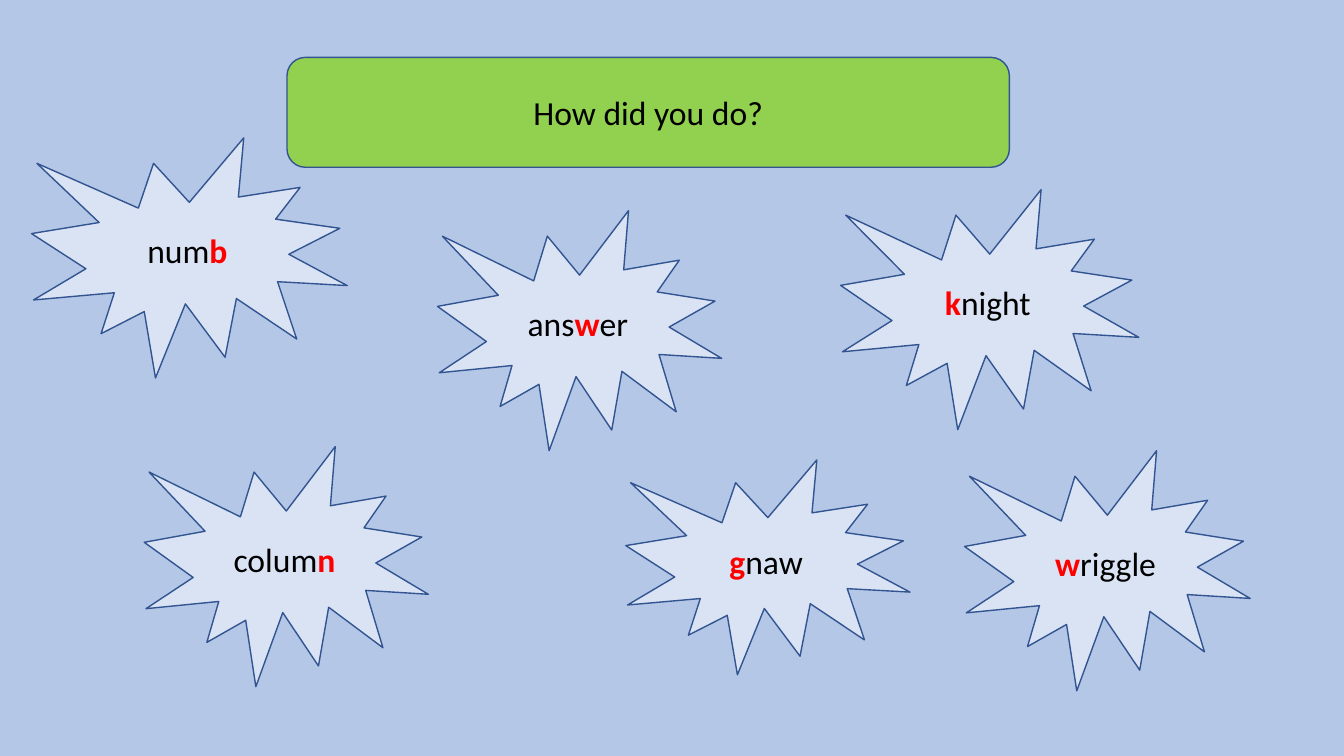
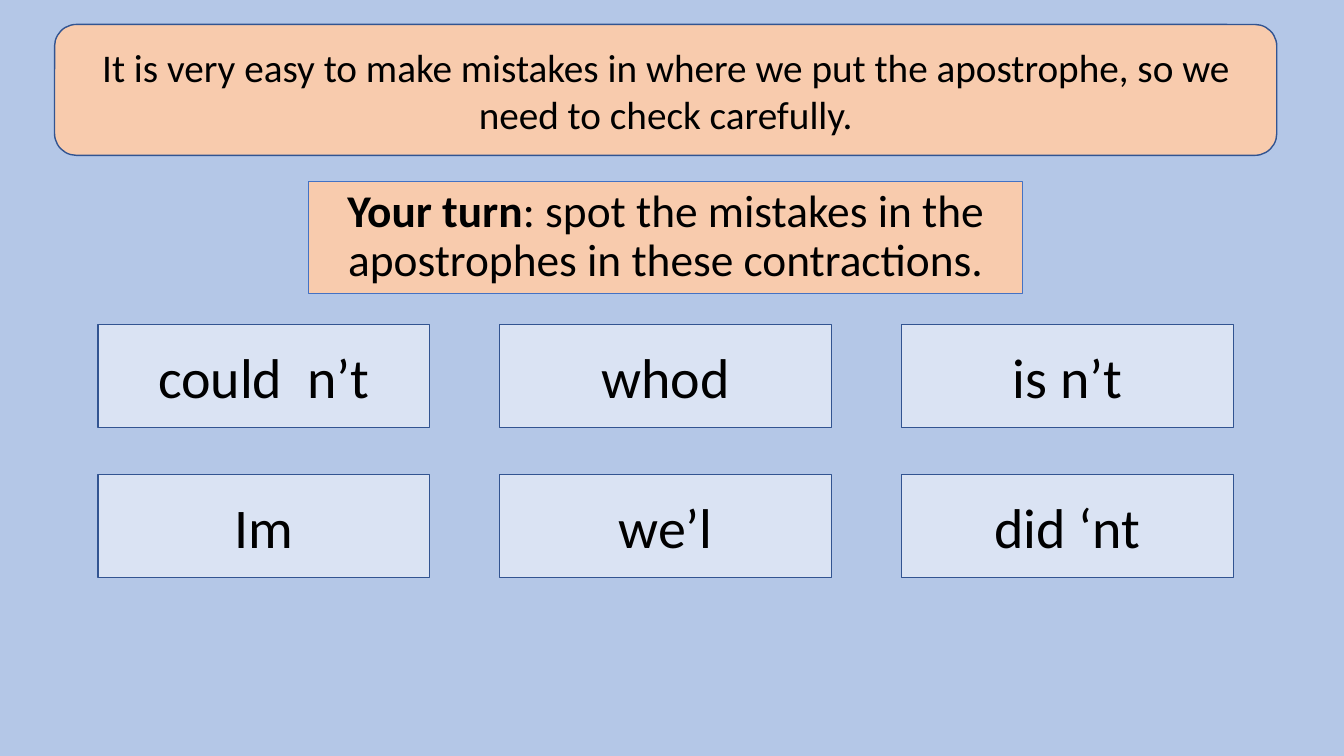
from pptx import Presentation
from pptx.dml.color import RGBColor
from pptx.enum.shapes import MSO_SHAPE as Shape
from pptx.enum.text import MSO_ANCHOR as Anchor, MSO_AUTO_SIZE as AutoSize, PP_ALIGN as Align
from pptx.util import Pt

COLORS = {
    "background": "B4C7E7",
    "green": "92D050",
    "peach": "F8CBAD",
    "pale": "DAE3F3",
    "outline": "325491",
    "title_outline": "4472C4",
    "text": "000000",
    "highlight": "FF0000",
}
FONT = "Calibri"


def color(name):
    return RGBColor.from_string(COLORS[name])


def format_box(shape, box, fill, size, runs, outline="outline", line_width=1):
    shape.left, shape.top, shape.width, shape.height = [Pt(value) for value in box]
    shape.fill.solid()
    shape.fill.fore_color.rgb = color(fill)
    shape.line.color.rgb = color(outline)
    shape.line.width = Pt(line_width)
    frame = shape.text_frame
    frame.word_wrap = True
    frame.auto_size = AutoSize.NONE
    frame.vertical_anchor = Anchor.MIDDLE
    paragraph = frame.paragraphs[0]
    paragraph.alignment = Align.CENTER
    for text, text_color, bold in runs:
        run = paragraph.add_run()
        run.text = text
        run.font.name = FONT
        run.font.size = Pt(size)
        run.font.bold = bold
        run.font.color.rgb = color(text_color)


def add_box(slide, kind, box, fill, size, runs):
    shape = slide.shapes.add_shape(kind, *[Pt(value) for value in box])
    shape.shadow.inherit = False
    format_box(shape, box, fill, size, runs)


presentation = Presentation()
presentation.slide_width = Pt(960)
presentation.slide_height = Pt(540)
background = presentation.slide_master.background.fill
background.solid()
background.fore_color.rgb = color("background")
title_only, blank = presentation.slide_layouts[5], presentation.slide_layouts[6]

slide = presentation.slides.add_slide(blank)
add_box(slide, Shape.ROUNDED_RECTANGLE, (205, 41, 516, 78.5), "green", 24,
        [("How did you do?", "text", False)])

silent_letter_stars = [
    ("ans", "w", "er", (312.5, 150.5, 203, 171.5)),
    ("", "k", "night", (600.5, 135.5, 213, 171.5)),
    ("num", "b", "", (22.5, 98.5, 225.5, 171.5)),
    ("", "w", "riggle", (689, 322, 204, 171.5)),
    ("colum", "n", "", (103, 319, 203, 171.5)),
    ("", "g", "naw", (447, 328.5, 203, 153.5)),
]
for before, silent, after, box in silent_letter_stars:
    parts = [(before, "text", False), (silent, "highlight", True), (after, "text", False)]
    add_box(slide, Shape.EXPLOSION1, box, "pale", 24, [part for part in parts if part[0]])

slide = presentation.slides.add_slide(title_only)
title = slide.shapes.title
format_box(title, (220.5, 129.5, 510, 80.5), "peach", 32.4,
           [("Your turn", "text", True),
            (": spot the mistakes in the apostrophes in these contractions.", "text", False)],
           "title_outline", 0.75)
title.text_frame.paragraphs[0].line_spacing = 0.9

add_box(slide, Shape.ROUNDED_RECTANGLE, (39, 17.5, 873, 93.5), "peach", 28,
        [("It is very easy to make mistakes in where we put the apostrophe, "
          "so we need to check carefully.", "text", False)])

contractions = [
    ["could  n’t", "whod", "is n’t"],
    ["Im", "we’l", "did ‘nt"],
]
for row, words in enumerate(contractions):
    for column, word in enumerate(words):
        box = (70 + 287 * column, 232 + 107 * row, 237, 73.5)
        add_box(slide, Shape.RECTANGLE, box, "pale", 40, [(word, "text", False)])

presentation.save("out.pptx")
